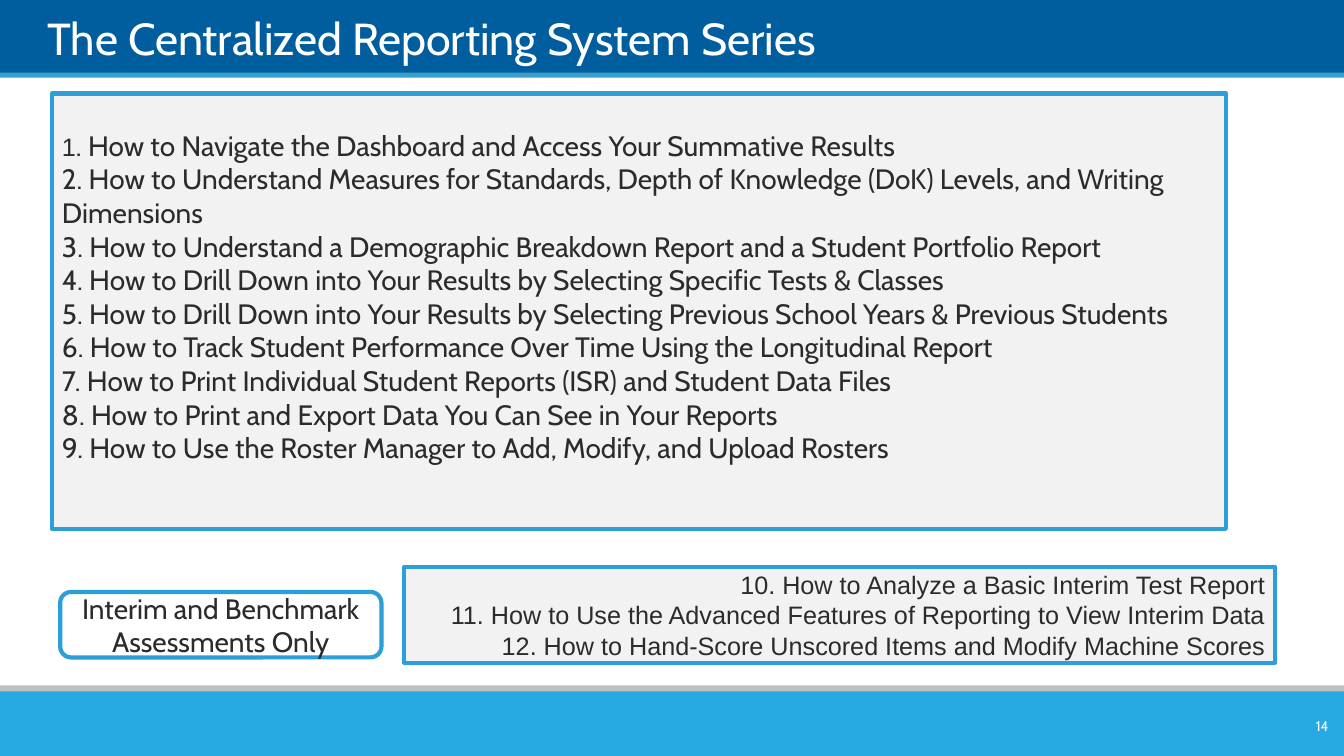
import pptx
import pptx.util
import pptx.dml.color
import pptx.enum.shapes
import pptx.enum.text

Pt = pptx.util.Pt
RGB = pptx.dml.color.RGBColor.from_string
SHAPE = pptx.enum.shapes.MSO_SHAPE
ALIGN = pptx.enum.text.PP_ALIGN
ANCHOR = pptx.enum.text.MSO_ANCHOR

COLORS = {
    "navy": "005E9E",
    "edge": "35A0CE",
    "gray": "BFBFBF",
    "sky": "27AAE1",
    "panel": "F2F2F2",
    "border": "2C9ED9",
    "ink": "2A2B2D",
    "white": "FFFFFF",
}


def add_box(kind, box, fill=None, line=None):
    sp = s.shapes.add_shape(kind, *[Pt(v) for v in box])
    sp.shadow.inherit = False
    if fill:
        sp.fill.solid()
        sp.fill.fore_color.rgb = RGB(COLORS[fill])
    else:
        sp.fill.background()
    if line:
        sp.line.color.rgb = RGB(COLORS[line])
        sp.line.width = Pt(3)
    else:
        sp.line.fill.background()
    return sp


def write(tf, paragraphs, align, anchor=ANCHOR.MIDDLE, color="ink"):
    tf.word_wrap = True
    tf.auto_size = pptx.enum.text.MSO_AUTO_SIZE.NONE
    tf.vertical_anchor = anchor
    for i, runs in enumerate(paragraphs):
        p = tf.add_paragraph() if i else tf.paragraphs[0]
        p.alignment = align
        for text, font, size in runs:
            r = p.add_run()
            r.text = text
            r.font.name = font
            r.font.size = Pt(size)
            r.font.color.rgb = RGB(COLORS[color])


prs = pptx.Presentation()
prs.slide_width, prs.slide_height = Pt(960), Pt(540)
s = prs.slides.add_slide(prs.slide_layouts[5])

for top, height, fill in [
    (-0.7, 54, "navy"),
    (51.8, 3.6, "edge"),
    (489.6, 10, "gray"),
    (493.9, 46.1, "sky"),
]:
    add_box(SHAPE.RECTANGLE, (0, top, 960, height), fill)

title = s.shapes.title
s.shapes.element.append(title.element)
title.left, title.top, title.width, title.height = Pt(33.8), Pt(5), Pt(895), Pt(41)
tf = title.text_frame
tf.margin_left = tf.margin_right = tf.margin_top = tf.margin_bottom = 0
write(tf, [[("The Centralized Reporting System Series", "Cabin", 32)]],
      ALIGN.LEFT, ANCHOR.BOTTOM, "white")

number = s.shapes.add_textbox(Pt(900.7), Pt(507.6), Pt(55.4), Pt(21.6))
write(number.text_frame, [[("14", "Cabin", 10)]], ALIGN.RIGHT, color="white")

interim = [
    "10. How to Analyze a Basic Interim Test Report",
    "11. How to Use the Advanced Features of Reporting to View Interim Data",
    "12. How to Hand-Score Unscored Items and Modify Machine Scores",
]
sp = add_box(SHAPE.RECTANGLE, (288.7, 404.8, 622, 68.6), "panel", "border")
write(sp.text_frame, [[(text, "Arial", 18)] for text in interim], ALIGN.RIGHT)

topics = [
    "Navigate the Dashboard and Access Your Summative Results",
    "Understand Measures for Standards, Depth of Knowledge (DoK) Levels, and Writing Dimensions",
    "Understand a Demographic Breakdown Report and a Student Portfolio Report",
    "Drill Down into Your Results by Selecting Specific Tests & Classes",
    "Drill Down into Your Results by Selecting Previous School Years & Previous Students",
    "Track Student Performance Over Time Using the Longitudinal Report",
    "Print Individual Student Reports (ISR) and Student Data Files",
    "Print and Export Data You Can See in Your Reports",
    "Use the Roster Manager to Add, Modify, and Upload Rosters",
]
lines = [[(f"{n}. How to {topic}", "Cabin", 20)] for n, topic in enumerate(topics, 1)]
lines[0] = [("1", "Arial", 18), (f". How to {topics[0]}", "Cabin", 20)]
sp = add_box(SHAPE.RECTANGLE, (37.2, 66.8, 838.4, 311), "panel", "border")
sp.text_frame.margin_bottom = Pt(25)
write(sp.text_frame, lines, ALIGN.LEFT)

sp = add_box(SHAPE.ROUNDED_RECTANGLE, (43, 422.8, 229.5, 46.8), line="border")
write(sp.text_frame, [[("Interim and Benchmark Assessments Only", "Cabin", 20)]], ALIGN.CENTER)

prs.save("out.pptx")
